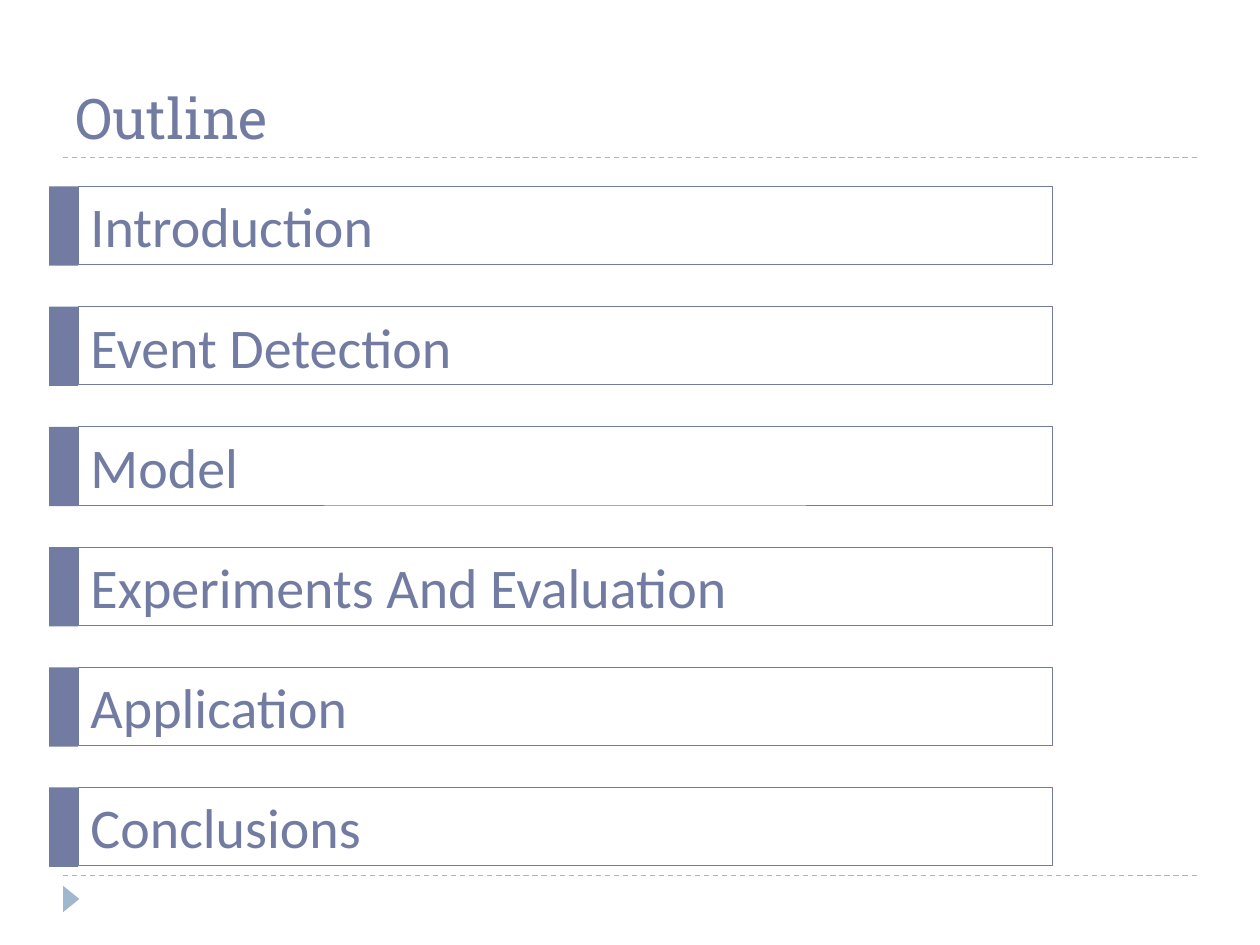
from lxml.etree import SubElement
from pptx import Presentation
from pptx.dml.color import RGBColor
from pptx.enum.dml import MSO_LINE
from pptx.enum.shapes import MSO_CONNECTOR, MSO_SHAPE
from pptx.enum.text import MSO_ANCHOR, PP_ALIGN
from pptx.oxml.ns import qn
from pptx.util import Inches, Pt

COLORS = {"accent": "727CA3", "light": "9FB8CD"}
TOPICS = ["Introduction", "Event Detection", "Model",
          "Experiments And Evaluation", "Application", "Conclusions"]
FIRST_TOP, ROW_STEP = 1.48, 0.954
TAB_LEFT, TAB_WIDTH, TAB_HEIGHT = 0.39, 0.23, 0.63
BOX_LEFT, BOX_WIDTH, BOX_HEIGHT = TAB_LEFT + TAB_WIDTH, 7.73, 0.62
MARGIN, RULE_TOPS = 0.5, (1.25, 6.95)


def color(name):
    return RGBColor.from_string(COLORS[name])


def write_text(shape, text, font_name, anchor):
    frame = shape.text_frame
    frame.text = text
    frame.word_wrap = True
    frame.vertical_anchor = anchor
    paragraph = frame.paragraphs[0]
    paragraph.alignment = PP_ALIGN.LEFT
    font = paragraph.runs[0].font
    for attribute, value in {"name": font_name, "size": Pt(32)}.items():
        setattr(font, attribute, value)
    font.color.rgb = color("accent")


def add_title(slide, text):
    title = slide.shapes.title
    place = {"left": MARGIN, "top": 0.17, "width": 9, "height": 1.08}
    for attribute, value in place.items():
        setattr(title, attribute, Inches(value))
    write_text(title, text, "Roboto Slab", MSO_ANCHOR.BOTTOM)


def add_rule(slide, top):
    """Add a dashed horizontal line between the side margins."""
    rule = slide.shapes.add_connector(
        MSO_CONNECTOR.STRAIGHT, Inches(MARGIN), Inches(top),
        Inches(10 - MARGIN), Inches(top))
    rule.line.color.rgb = color("light")
    for attribute, value in {"width": Pt(0.75), "dash_style": MSO_LINE.DASH}.items():
        setattr(rule.line, attribute, value)
    SubElement(rule._element.spPr, qn("a:effectLst"))


def add_filled_shape(slide, kind, place, fill):
    shape = slide.shapes.add_shape(kind, *map(Inches, place))
    shape.shadow.inherit = False
    shape.fill.solid()
    shape.fill.fore_color.rgb = color(fill)
    shape.line.fill.background()
    return shape


def add_topic(slide, row, text):
    """Add an outlined topic box with a solid tab on its left."""
    top = FIRST_TOP + row * ROW_STEP
    box = slide.shapes.add_shape(
        MSO_SHAPE.RECTANGLE,
        *map(Inches, (BOX_LEFT, top, BOX_WIDTH, BOX_HEIGHT)))
    box.shadow.inherit = False
    box.fill.background()
    box.line.color.rgb = color("accent")
    box.line.width = Pt(0.5)
    write_text(box, text, "Calibri", MSO_ANCHOR.MIDDLE)
    add_filled_shape(slide, MSO_SHAPE.RECTANGLE,
                     (TAB_LEFT, top, TAB_WIDTH, TAB_HEIGHT), "accent")


def main():
    presentation = Presentation()
    presentation.slide_width, presentation.slide_height = Inches(10), Inches(7.5)
    slide = presentation.slides.add_slide(presentation.slide_layouts[5])
    for top in RULE_TOPS:
        add_rule(slide, top)
    marker = add_filled_shape(slide, MSO_SHAPE.ISOSCELES_TRIANGLE,
                              (0.46, 7.07, 0.21, 0.13), "light")
    marker.rotation = 90
    add_title(slide, "Outline")
    for row, topic in enumerate(TOPICS):
        add_topic(slide, row, topic)
    presentation.save("out.pptx")


if __name__ == "__main__":
    main()
